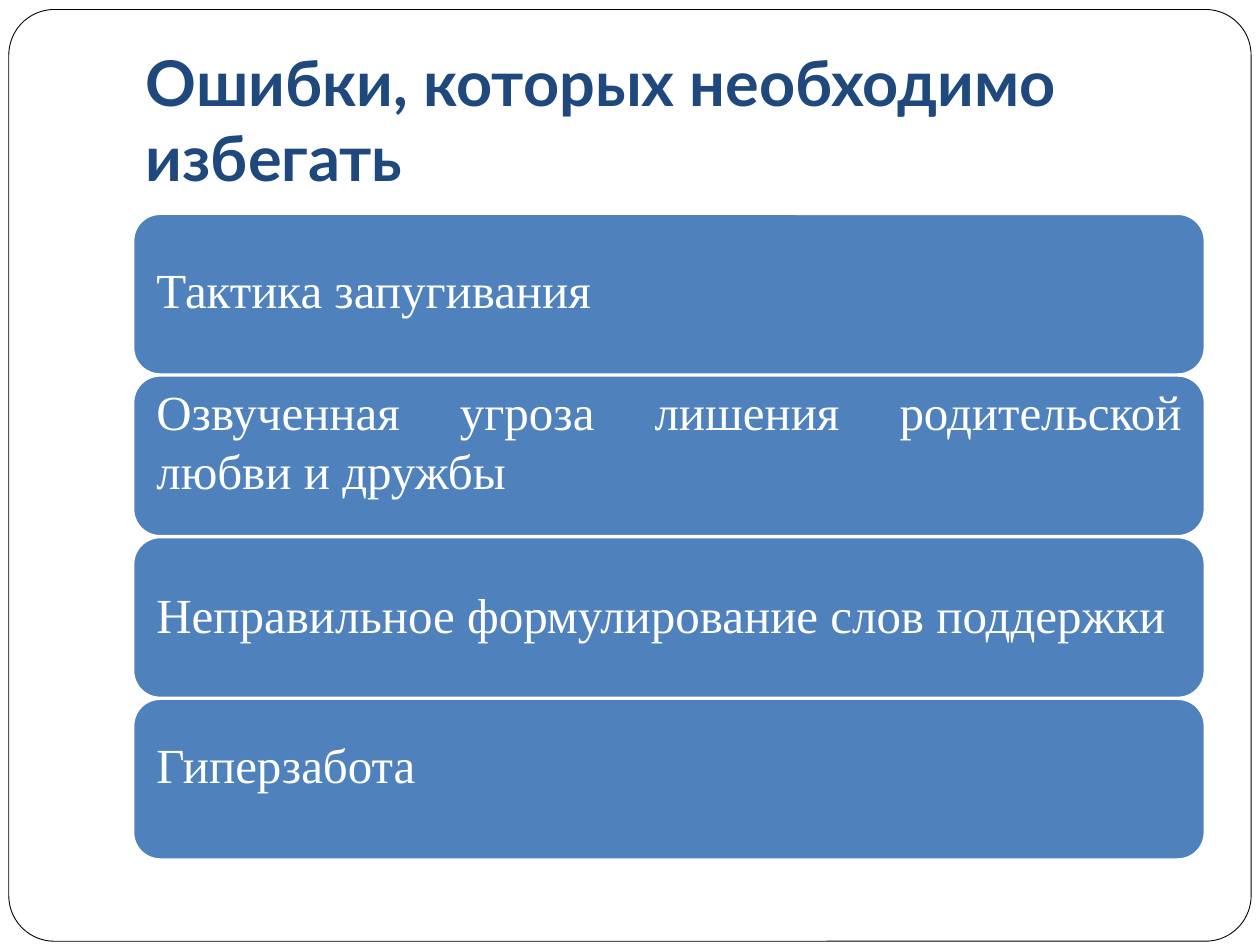
import dataclasses
import pptx
import pptx.util
import pptx.dml.color
import pptx.enum.shapes
import pptx.enum.text

WIDE, HIGH = 10, 7.5
LEFT, SPAN = 0.106, 0.85
TOP, PITCH, TALL = 1.7 / HIGH, 1.283 / HIGH, 1.27 / HIGH
ALIGN = pptx.enum.text.PP_ALIGN
ANCHOR = pptx.enum.text.MSO_ANCHOR


@dataclasses.dataclass
class Box:
    left: float
    top: float
    width: float
    height: float

    def place(self) -> list:
        shares = (self.left * WIDE, self.top * HIGH,
                  self.width * WIDE, self.height * HIGH)
        return [pptx.util.Inches(x) for x in shares]


@dataclasses.dataclass
class Error:
    text: str
    lift: float = 0
    align: int = ALIGN.JUSTIFY
    lead: float = 1.0


ERRORS = [
    Error("Тактика запугивания", 0.04),
    Error("Озвученная угроза лишения родительской любви и дружбы", 0.12),
    Error("Неправильное формулирование слов поддержки", 0, ALIGN.LEFT, 0.9),
    Error("Гиперзабота", 0.12),
]


def tint(color, code: str) -> None:
    color.rgb = pptx.dml.color.RGBColor.from_string(code)


def panel(slide, box: Box, fill: str, line: str, width: float, bend: float):
    kind = pptx.enum.shapes.MSO_SHAPE.ROUNDED_RECTANGLE
    shape = slide.shapes.add_shape(kind, *box.place())
    shape.shadow.inherit = False
    shape.adjustments[0] = bend
    shape.fill.solid()
    tint(shape.fill.fore_color, fill)
    tint(shape.line.color, line)
    shape.line.width = pptx.util.Pt(width)
    return shape


def write(shape, text: str, font: str, size: float, code: str, bold: bool,
          anchor, align, insets: tuple, lead: float = 1.0) -> None:
    frame = shape.text_frame
    frame.text = text
    frame.word_wrap = True
    frame.vertical_anchor = anchor
    (frame.margin_left, frame.margin_top, frame.margin_right,
     frame.margin_bottom) = [pptx.util.Inches(x) for x in insets]
    para = frame.paragraphs[0]
    para.alignment = align
    para.line_spacing = lead
    style = para.runs[0].font
    style.name = font
    style.size = pptx.util.Pt(size)
    style.bold = bold
    tint(style.color, code)


def bar(slide, row: int, error: Error) -> None:
    box = Box(LEFT, TOP + row * PITCH, SPAN, TALL)
    shape = panel(slide, box, "4F81BD", "FFFFFF", 1, 0.1667)
    insets = (0.12, 0.12 - error.lift, 0.12, 0.12 + error.lift)
    write(shape, error.text, "Times New Roman", 28, "FFFFFF", False,
          ANCHOR.MIDDLE, error.align, insets, error.lead)


def main() -> None:
    deck = pptx.Presentation()
    deck.slide_width = pptx.util.Inches(WIDE)
    deck.slide_height = pptx.util.Inches(HIGH)
    slide = deck.slides.add_slide(deck.slide_layouts[6])
    panel(slide, Box(0.007, 0.01, 0.986, 0.986), "FFFFFF", "000000", 0.5, 0.049)
    title = slide.shapes.add_textbox(*Box(LEFT, 0.052, SPAN, 0.167).place())
    write(title, "Ошибки, которых необходимо избегать", "Lato", 36, "1F497D",
          True, ANCHOR.BOTTOM, ALIGN.LEFT, (0.1, 0.05, 0.1, 0.1))
    for row, error in enumerate(ERRORS):
        bar(slide, row, error)
    deck.save("out.pptx")


if __name__ == "__main__":
    main()
